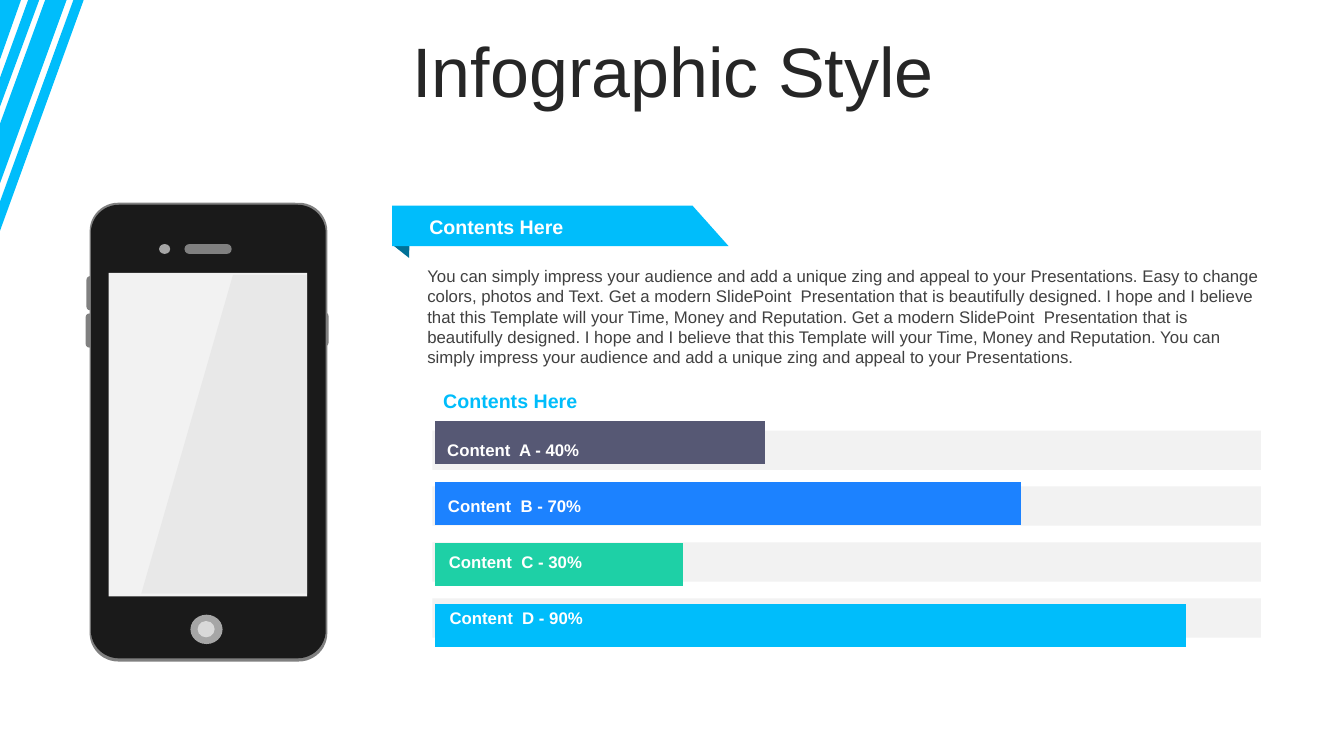
from lxml import etree
from pptx import Presentation
from pptx import util as u
from pptx.chart import data as chart_data
from pptx.dml.color import RGBColor
from pptx.enum import chart as charts, shapes, text
from pptx.oxml import parse_xml
from pptx.oxml.ns import nsdecls, qn

SKY = RGBColor(0x00, 0xBD, 0xFB)
DEEP_SKY = RGBColor(0x00, 0x71, 0x97)
GREEN = RGBColor(0x1E, 0xD0, 0xA6)
BLUE = RGBColor(0x1C, 0x82, 0xFF)
SLATE = RGBColor(0x56, 0x58, 0x74)
BLACK = RGBColor(0x1A, 0x1A, 0x1A)
INK = RGBColor(0x26, 0x26, 0x26)
DARK = RGBColor(0x40, 0x40, 0x40)
GREY = RGBColor(0x80, 0x80, 0x80)
GLARE = RGBColor(0x99, 0x99, 0x99)
SILVER = RGBColor(0xA6, 0xA6, 0xA6)
LIGHT = RGBColor(0xD9, 0xD9, 0xD9)
PALE = RGBColor(0xF2, 0xF2, 0xF2)
WHITE = RGBColor(0xFF, 0xFF, 0xFF)

RECT = shapes.MSO_SHAPE.RECTANGLE
ROUND = shapes.MSO_SHAPE.ROUNDED_RECTANGLE
OVAL = shapes.MSO_SHAPE.OVAL
FONT = "Arial"

# All lengths are in centimetres; frames are left, top, width, height.
TITLE = "Infographic Style"
HEADING = "Contents Here"
BODY = (
    "You can simply impress your audience and add a unique zing and appeal to your "
    "Presentations. Easy to change colors, photos and Text. Get a modern SlidePoint  "
    "Presentation that is beautifully designed. I hope and I believe that this Template "
    "will your Time, Money and Reputation. Get a modern SlidePoint  Presentation that is "
    "beautifully designed. I hope and I believe that this Template will your Time, Money "
    "and Reputation. You can simply impress your audience and add a unique zing and "
    "appeal to your Presentations."
)
BAR_LABELS = ["Content  A - 40%", "Content  B - 70%", "Content  C - 30%", "Content  D - 90%"]
BARS = [("1", 100, SKY), ("2", 33, GREEN), ("3", 78, BLUE), ("4", 44, SLATE)]  # bottom up
BAR_PITCH = 1.41

# Each stripe runs from the top edge (x from, to) to the left edge (y from, to).
STRIPES = [(0, 0.53, 0, 1.5), (0.71, 0.99, 1.96, 2.69),
           (1.14, 1.68, 3.12, 4.62), (1.85, 2.11, 5.08, 5.82)]
PHONE = [  # preset, frame, corner radius share, fill
    (ROUND, (2.18, 6.96, 0.18, 0.86), 0.5, GREY),
    (ROUND, (2.16, 7.9, 0.18, 0.86), 0.5, GREY),
    (ROUND, (8.1, 7.87, 0.18, 0.86), 0.5, GREY),
    (ROUND, (2.26, 5.11, 5.99, 11.56), 0.12, GREY),
    (ROUND, (2.29, 5.16, 5.92, 11.43), 0.12, BLACK),
    (RECT, (2.74, 6.88, 5, 8.15), None, PALE),
    (OVAL, (4.8, 15.49, 0.81, 0.74), None, SILVER),
    (OVAL, (4.98, 15.65, 0.43, 0.41), None, LIGHT),
    (ROUND, (4.65, 6.15, 1.19, 0.25), 0.5, GREY),
    (OVAL, (4.01, 6.15, 0.28, 0.25), None, SILVER),
]
SCREEN_GLARE = [(5.87, 6.93), (7.75, 6.93), (7.77, 14.96), (3.56, 14.96)]
BANNER_FOLD = [(10.34, 5.23), (9.91, 5.23), (9.93, 6.2), (10.31, 6.5)]
BANNER = [(9.88, 5.18), (17.45, 5.18), (18.36, 6.2), (9.88, 6.2)]


def cm(values):
    return [u.Cm(value) for value in values]


def paint(shape, color):
    shape.shadow.inherit = False
    shape.fill.solid()
    shape.fill.fore_color.rgb = color
    shape.line.fill.background()
    return shape


def add_preset(page, preset, frame, radius, color):
    shape = paint(page.shapes.add_shape(preset, *cm(frame)), color)
    if radius is not None:
        shape.adjustments[0] = radius


def add_outline(page, outlines, color):
    """Draw closed outlines, each a list of points, as one filled freeform."""
    builder = page.shapes.build_freeform(*cm(outlines[0][0]), scale=1.0)
    for index, points in enumerate(outlines):
        if index:
            builder.move_to(*cm(points[0]))
        builder.add_line_segments([cm(point) for point in points[1:]], close=True)
    return paint(builder.convert_to_shape(), color)


def add_text(page, frame, words, size, color, bold=False, left=0.25,
             anchor=text.MSO_ANCHOR.MIDDLE, **para_format):
    box = page.shapes.add_textbox(*cm(frame)).text_frame
    para = box.paragraphs[0]
    span = para.add_run()
    span.text = words
    span.font.color.rgb = color
    for target, values in (
        (box, {"word_wrap": True, "vertical_anchor": anchor, "margin_left": u.Cm(left)}),
        (para, para_format),
        (span.font, {"name": FONT, "size": u.Pt(size), "bold": bold}),
    ):
        for name, value in values.items():
            setattr(target, name, value)


def add_bar_chart(page, frame):
    data = chart_data.CategoryChartData()
    data.categories = [name for name, _, _ in BARS]
    data.add_series("Series 1", [value for _, value, _ in BARS])
    chart = page.shapes.add_chart(charts.XL_CHART_TYPE.BAR_STACKED, *cm(frame), data).chart
    plot = chart.plots[0]
    for target, values in (
        (chart, {"has_legend": False, "has_title": False}),
        (chart.font, {"name": FONT, "size": u.Pt(12)}),
        (plot, {"gap_width": 40, "overlap": 100, "vary_by_categories": False}),
        (chart.category_axis, {"visible": False}),
        (chart.value_axis, {"visible": False, "has_major_gridlines": False,
                            "minimum_scale": 0, "maximum_scale": 110}),
    ):
        for name, value in values.items():
            setattr(target, name, value)
    chart.font.color.rgb = RGBColor(0, 0, 0)
    series = plot.series[0]
    for index, (_, _, color) in enumerate(BARS):
        fill = series.points[index].format.fill
        fill.solid()
        fill.fore_color.rgb = color

    area = chart.element.find(".//" + qn("c:plotArea"))
    for old in area.findall(qn("c:layout")):
        area.remove(old)
    places = {"layoutTarget": "inner", "xMode": "edge", "yMode": "edge",
              "x": 0.02, "y": 0.02, "w": 0.95, "h": 0.96}
    inner = "".join(f'<c:{name} val="{value}"/>' for name, value in places.items())
    area.insert(0, parse_xml(
        f'<c:layout {nsdecls("c")}><c:manualLayout>{inner}</c:manualLayout></c:layout>'))


def main():
    deck = Presentation()
    deck.slide_width, deck.slide_height = cm((33.87, 19.05))
    page = deck.slides.add_slide(deck.slide_layouts[6])

    for part in PHONE:
        add_preset(page, *part)
    glare = add_outline(page, [SCREEN_GLARE], GLARE)
    tint = glare.fill._xPr.find(".//" + qn("a:srgbClr"))
    etree.SubElement(tint, qn("a:alpha"), val="10000")

    add_outline(page, [[(x1, 0), (x2, 0), (0, y2), (0, y1)] for x1, x2, y1, y2 in STRIPES], SKY)
    add_outline(page, [BANNER_FOLD], DEEP_SKY)
    add_outline(page, [BANNER], SKY)
    add_text(page, (0.89, 0.94, 32.16, 2.01), TITLE, 50, INK,
             alignment=text.PP_ALIGN.CENTER, line_spacing=0.8, space_before=u.Pt(10))

    for row in range(len(BAR_LABELS)):
        add_preset(page, RECT, (10.9, 10.85 + row * BAR_PITCH, 20.88, 0.99), None, PALE)
    add_bar_chart(page, (10.52, 10.26, 21.92, 6.4))
    for row, label in enumerate(BAR_LABELS):
        frame = (11.02 + row * 0.02, 10.95 + row * BAR_PITCH, 4.34, 0.76)
        add_text(page, frame, label, 12, WHITE, bold=True)

    add_text(page, (10.52, 5.18, 6.4, 1.04), HEADING, 14, WHITE, bold=True, left=0.3)
    add_text(page, (10.87, 9.7, 4.85, 0.79), HEADING, 14, SKY, bold=True, left=0.3)
    add_text(page, (10.52, 6.58, 21.69, 2.82), BODY, 12, DARK, anchor=text.MSO_ANCHOR.TOP)
    deck.save("out.pptx")


if __name__ == "__main__":
    main()
